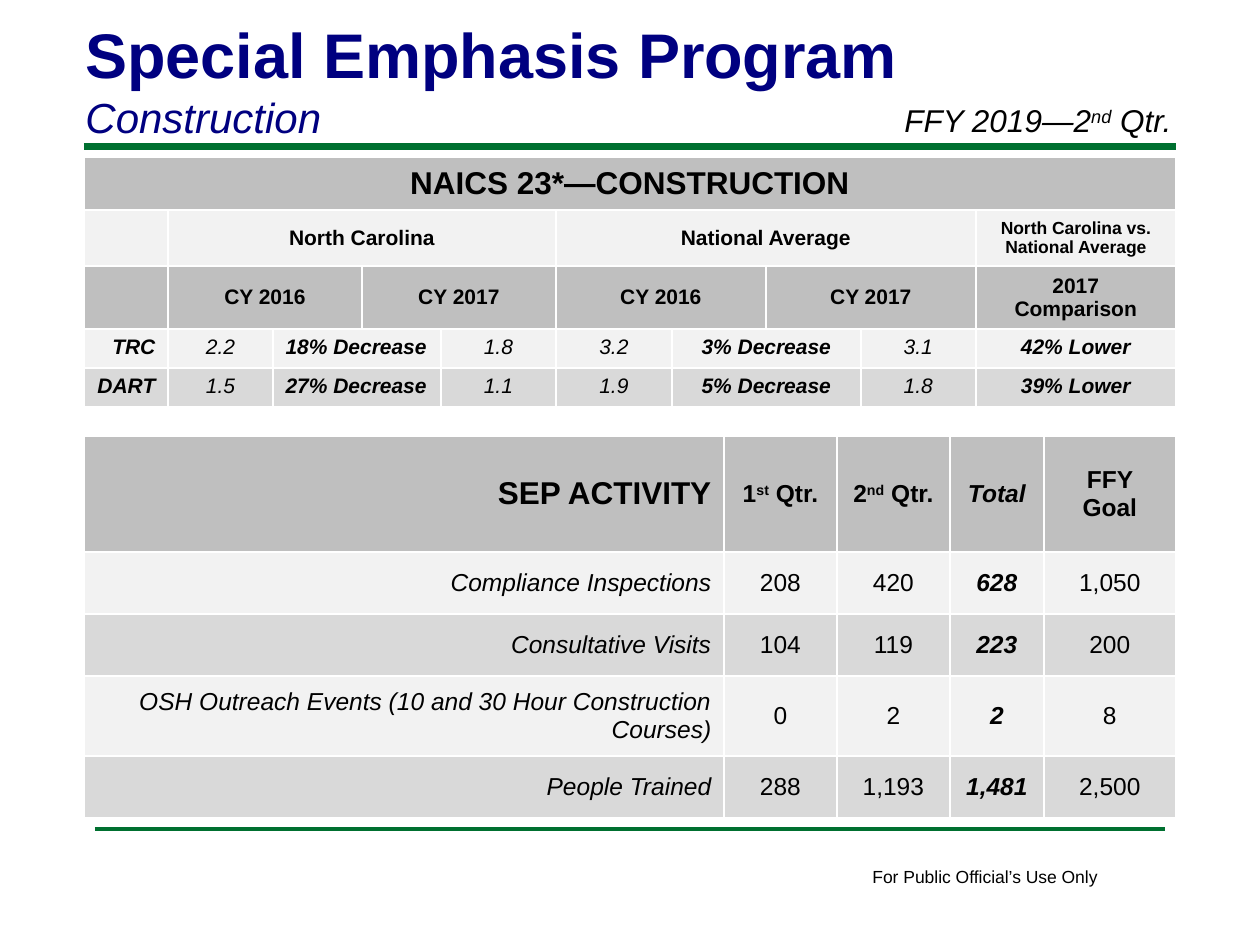
from pptx import Presentation, util as u
from pptx.dml.color import RGBColor
from pptx.enum import shapes, text
from pptx.oxml import parse_xml
from pptx.oxml.ns import nsdecls

PX = 914400 / 126
FONT = "Arial"
COLORS = {"navy": "000080", "green": "007030", "black": "000000", "white": "FFFFFF",
          "head": "BFBFBF", "light": "F2F2F2", "band": "D9D9D9"}
ALIGN = {"l": text.PP_ALIGN.LEFT, "c": text.PP_ALIGN.CENTER, "r": text.PP_ALIGN.RIGHT}

RATE_COLS = [84, 105, 89, 79, 115, 116, 94, 95, 115, 200]
RATE_ROWS = [53, 56, 53, 39, 39]
RATES = [
    ["TRC", "2.2", "18% Decrease", "1.8", "3.2", "3% Decrease", "3.1", "42% Lower"],
    ["DART", "1.5", "27% Decrease", "1.1", "1.9", "5% Decrease", "1.8", "39% Lower"],
]
RATE_STARTS = [0, 1, 2, 4, 5, 6, 8, 9]

ACTIVITY_COLS = [640, 113, 113, 94, 132]
ACTIVITY_ROWS = [116, 62, 62, 80, 62]
ACTIVITY_HEAD = ["SEP ACTIVITY", "1^st^ Qtr.", "2^nd^ Qtr.", "Total", "FFY Goal"]
ACTIVITIES = [
    ["Compliance Inspections", "208", "420", "628", "1,050"],
    ["Consultative Visits", "104", "119", "223", "200"],
    ["OSH Outreach Events (10 and 30 Hour Construction Courses)", "0", "2", "2", "8"],
    ["People Trained", "288", "1,193", "1,481", "2,500"],
]


def px(n):
    return u.Emu(round(n * PX))


def rgb(name):
    return RGBColor.from_string(COLORS[name])


def write(p, words, size, color="black", bold=False, italic=False, align="l"):
    """Fill a paragraph; text between carets is superscript."""
    p.alignment = ALIGN[align]
    for i, part in enumerate(words.split("^")):
        r = p.add_run()
        r.text = part
        f = r.font
        f.name, f.size, f.bold, f.italic = FONT, u.Pt(size), bold, italic
        f.color.rgb = rgb(color)
        if i % 2:
            r._r.get_or_add_rPr().set("baseline", "30000")


def add_text(slide, box, wrap=True, anchor=text.MSO_ANCHOR.TOP):
    tf = slide.shapes.add_textbox(*map(px, box)).text_frame
    tf.word_wrap = wrap
    tf.vertical_anchor = anchor
    return tf


def add_rule(slide, left, right, y, width):
    line = slide.shapes.add_connector(shapes.MSO_CONNECTOR.STRAIGHT,
                                      px(left), px(y), px(right), px(y))
    line.line.color.rgb = rgb("green")
    line.line.width = u.Pt(width)
    line._element.spPr.append(parse_xml(f"<a:effectLst {nsdecls('a')}/>"))


def add_table(slide, left, top, cols, rows, fills):
    """Add a table with white borders and one fill per row."""
    table = slide.shapes.add_table(len(rows), len(cols), px(left), px(top),
                                   px(sum(cols)), px(sum(rows))).table
    table.first_row = table.horz_banding = False
    for column, width in zip(table.columns, cols):
        column.width = px(width)
    for row, height, fill in zip(table.rows, rows, fills):
        row.height = px(height)
        for cell in row.cells:
            tcPr = cell._tc.get_or_add_tcPr()
            for side in "LRTB":
                tcPr.append(parse_xml(
                    f'<a:ln{side} {nsdecls("a")} w="12700"><a:solidFill>'
                    f'<a:srgbClr val="{COLORS["white"]}"/></a:solidFill></a:ln{side}>'))
            cell.fill.solid()
            cell.fill.fore_color.rgb = rgb(fill)
    return table


def set_cell(table, row, col, words, size, span=1, middle=True, align="c", **style):
    cell = table.cell(row, col)
    if span > 1:
        cell.merge(table.cell(row, col + span - 1))
    if middle:
        cell.vertical_anchor = text.MSO_ANCHOR.MIDDLE
    write(cell.text_frame.paragraphs[0], words, size, align=align, **style)


def add_rates(slide):
    table = add_table(slide, 84, 157, RATE_COLS, RATE_ROWS,
                      ["head", "light", "head", "light", "band"])
    set_cell(table, 0, 0, "NAICS 23*—CONSTRUCTION", 18, span=10, bold=True)
    for col, region in ((1, "North Carolina"), (5, "National Average")):
        set_cell(table, 1, col, region, 12, span=4, bold=True)
        for i, year in enumerate(("CY 2016", "CY 2017")):
            set_cell(table, 2, col + 2 * i, year, 12, span=2, bold=True)
    set_cell(table, 1, 9, "North Carolina vs. National Average", 10, bold=True)
    set_cell(table, 2, 9, "2017 Comparison", 12, bold=True)
    ends = RATE_STARTS[1:] + [len(RATE_COLS)]
    for r, values in enumerate(RATES, 3):
        for start, end, value in zip(RATE_STARTS, ends, values):
            align = {0: "r", 2: "l"}.get(start, "c")
            is_rate = value[0].isdigit() and "%" not in value
            set_cell(table, r, start, value, 12, span=end - start, middle=False,
                     align=align, bold=not is_rate, italic=True)


def add_activities(slide):
    table = add_table(slide, 84, 436, ACTIVITY_COLS, ACTIVITY_ROWS,
                      ["head", "light", "band", "light", "band"])
    for r, values in enumerate([ACTIVITY_HEAD] + ACTIVITIES):
        for c, value in enumerate(values):
            is_total = c == 3
            set_cell(table, r, c, value, 18 if r == c == 0 else 14,
                     align="c" if c else "r", bold=r == 0 or is_total,
                     italic=is_total or (c == 0 and r > 0))


def main():
    prs = Presentation()
    prs.slide_width, prs.slide_height = u.Inches(10), u.Inches(7.5)
    slide = prs.slides.add_slide(prs.slide_layouts[6])

    add_rule(slide, 84, 1176, 147, 4)
    add_rule(slide, 95, 1165, 829, 2)
    footer = add_text(slide, (860, 860, 253, 34), wrap=False)
    write(footer.paragraphs[0], "For Public Official’s Use Only", 10)

    title = add_text(slide, (73, 8, 1040, 140), anchor=text.MSO_ANCHOR.BOTTOM)
    write(title.paragraphs[0], "Special Emphasis Program", 36, "navy", bold=True)
    write(title.add_paragraph(), "Construction", 24, "navy", italic=True)

    add_rates(slide)
    add_activities(slide)
    quarter = add_text(slide, (892, 95, 315, 50))
    write(quarter.paragraphs[0], "FFY 2019—2^nd^ Qtr.", 18, italic=True)
    prs.save("out.pptx")


if __name__ == "__main__":
    main()
